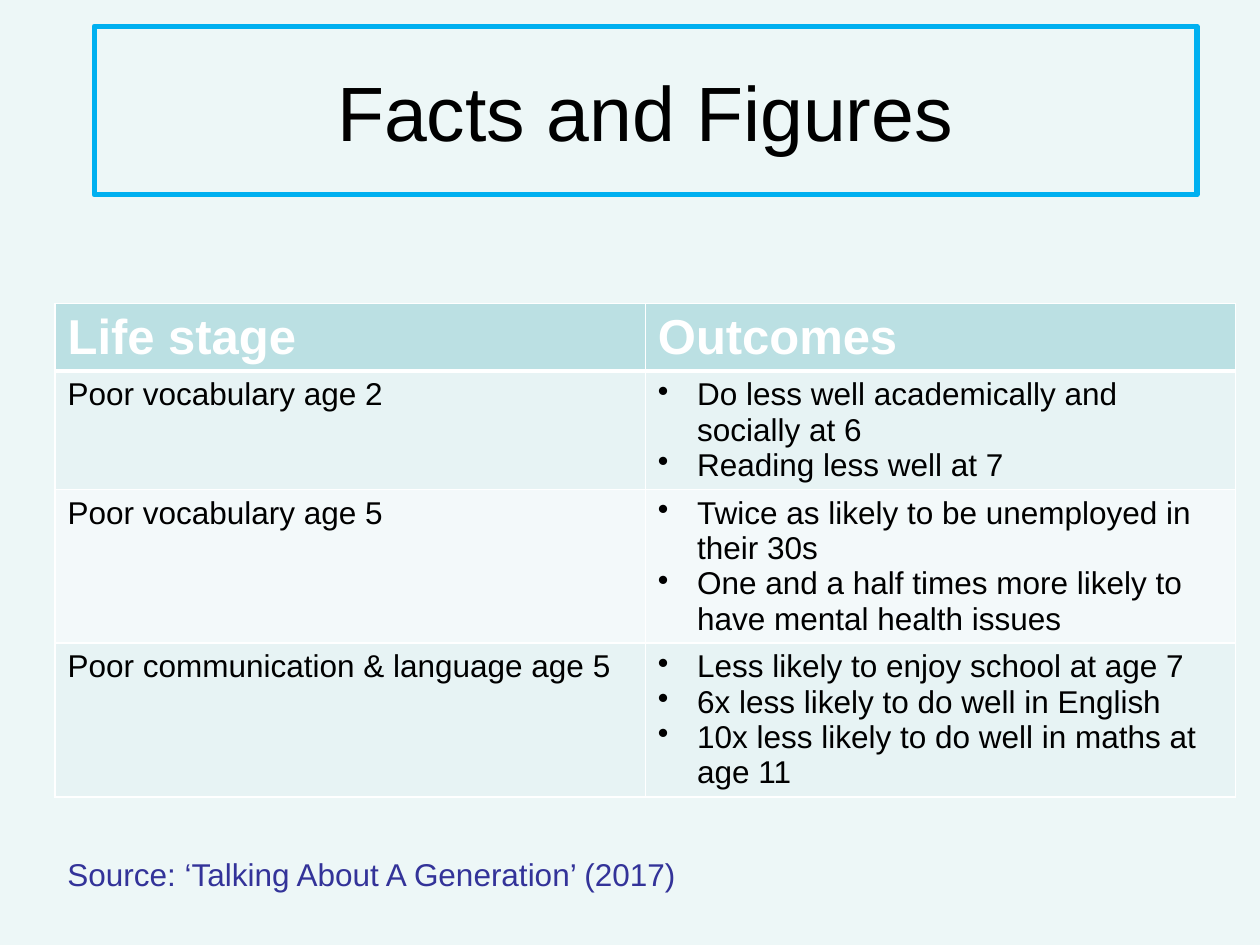
import pptx
import pptx.util
import pptx.dml.color
import pptx.enum.shapes
import pptx.enum.text
import pptx.oxml
import pptx.oxml.ns

Cm = pptx.util.Cm
Pt = pptx.util.Pt


def color(value):
    return pptx.dml.color.RGBColor.from_string(value)


def style(para, size, value, bold=False):
    para.font.name = "Arial"
    para.font.size = Pt(size)
    para.font.bold = bold
    para.font.color.rgb = color(value)


deck = pptx.Presentation()
deck.slide_width = Cm(25.4)
deck.slide_height = Cm(19.05)
page = deck.slides.add_slide(deck.slide_layouts[6])
page.background.fill.solid()
page.background.fill.fore_color.rgb = color("EDF7F7")

title = page.shapes.add_shape(
    pptx.enum.shapes.MSO_SHAPE.RECTANGLE, Cm(1.9), Cm(0.53), Cm(22.23), Cm(3.4)
)
title.shadow.inherit = False
title.fill.background()
title.line.color.rgb = color("00B0F0")
title.line.width = Pt(3)
title.text_frame.vertical_anchor = pptx.enum.text.MSO_ANCHOR.MIDDLE
para = title.text_frame.paragraphs[0]
para.text = "Facts and Figures"
para.alignment = pptx.enum.text.PP_ALIGN.CENTER
style(para, 44, "000000")

rows = [
    ("Life stage", ["Outcomes"], 1.35, "BBE0E3"),
    ("Poor vocabulary age 2", [
        "Do less well academically and socially at 6",
        "Reading less well at 7",
    ], 2.38, "E7F3F4"),
    ("Poor vocabulary age 5", [
        "Twice as likely to be unemployed in their 30s",
        "One and a half times more likely to have mental health issues",
    ], 3.1, "F3F9FA"),
    ("Poor communication & language age 5", [
        "Less likely to enjoy school at age 7",
        "6x less likely to do well in English",
        "10x less likely to do well in maths at age 11",
    ], 3.1, "E7F3F4"),
]
table = page.shapes.add_table(
    len(rows), 2, Cm(1.11), Cm(6.12), Cm(23.8), Cm(sum(row[2] for row in rows))
).table

for row_index, (stage, outcomes, height, fill) in enumerate(rows):
    table.rows[row_index].height = Cm(height)
    header = row_index == 0
    for column_index, lines in enumerate(([stage], outcomes)):
        cell = table.cell(row_index, column_index)
        properties = cell._tc.get_or_add_tcPr()
        for side in "LRTB":
            thick = (row_index, side) in ((0, "B"), (1, "T"))
            properties.append(pptx.oxml.parse_xml(
                f'<a:ln{side} {pptx.oxml.ns.nsdecls("a")} w="{Pt(3 if thick else 1)}">'
                '<a:solidFill><a:srgbClr val="FFFFFF"/></a:solidFill>'
                f'</a:ln{side}>'
            ))
        cell.fill.solid()
        cell.fill.fore_color.rgb = color(fill)
        cell.text_frame.text = "\n".join(lines)
        for para in cell.text_frame.paragraphs:
            style(para, 28 if header else 18, "FFFFFF" if header else "000000", header)
            if column_index == 1 and not header:
                settings = para._p.get_or_add_pPr()
                settings.set("marL", str(Cm(0.79)))
                settings.set("indent", str(-Cm(0.79)))
                settings.insert_element_before(pptx.oxml.parse_xml(
                    f'<a:buChar {pptx.oxml.ns.nsdecls("a")} char="•"/>'
                ), "a:defRPr")

source = page.shapes.add_textbox(Cm(1.11), Cm(17.12), Cm(19.58), Cm(1.02))
source.text_frame.word_wrap = True
para = source.text_frame.paragraphs[0]
para.text = "Source: ‘Talking About A Generation’ (2017)"
style(para, 18, "333399")

deck.save("out.pptx")
